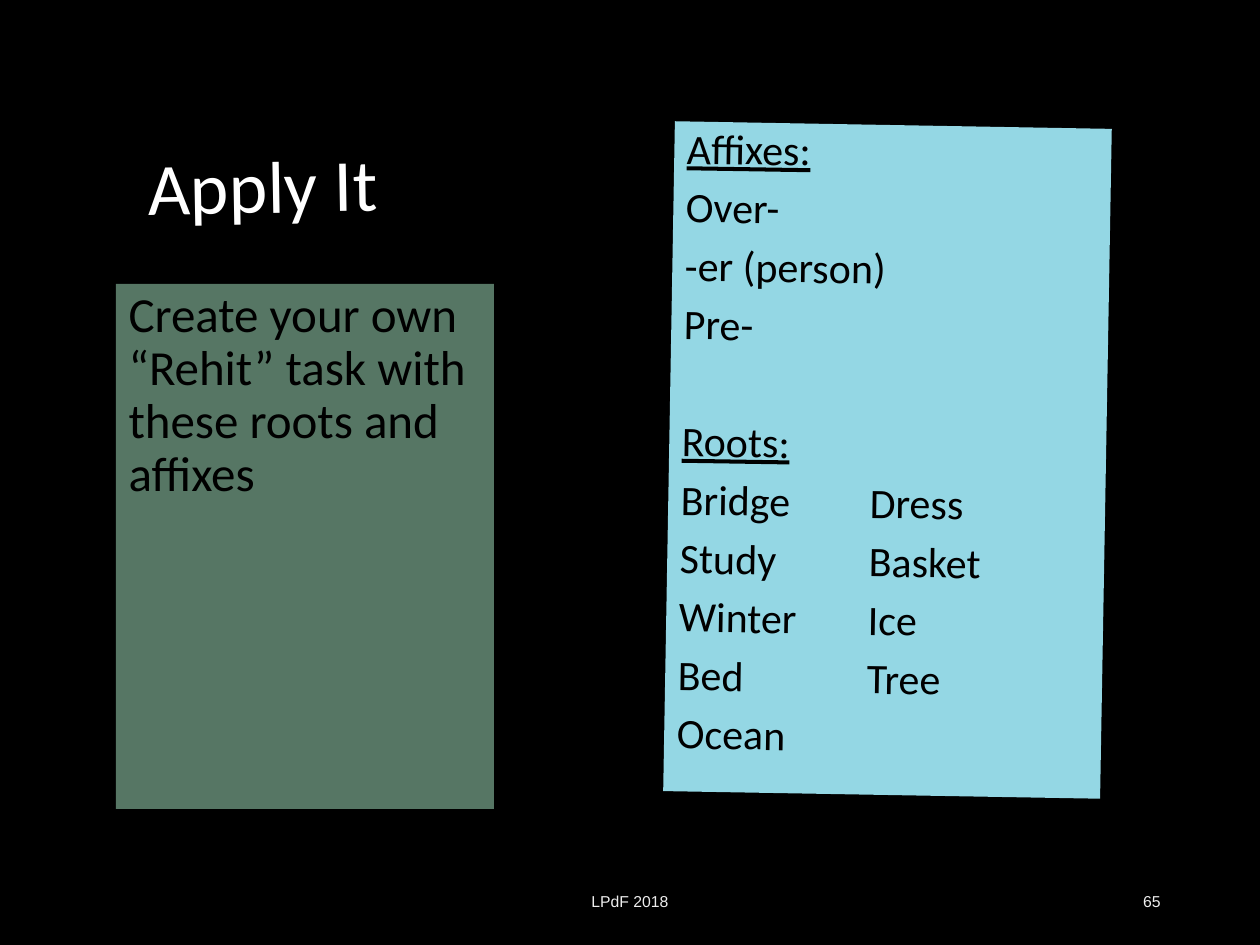
from lxml.etree import SubElement
from pptx import Presentation
from pptx.dml.color import RGBColor
from pptx.enum.text import MSO_ANCHOR, MSO_AUTO_SIZE, PP_ALIGN
from pptx.oxml.ns import qn
from pptx.util import Pt

PX = 914400 / 126
COLORS = {"black": "000000", "white": "FFFFFF", "blue": "94D7E4",
          "green": "567664", "footer": "EDEDED"}


def place(box, left, top, width, height, fill=None, rotation=0):
    box.left, box.top = round(left * PX), round(top * PX)
    box.width, box.height = round(width * PX), round(height * PX)
    box.rotation = rotation
    if fill:
        box.fill.solid()
        box.fill.fore_color.rgb = RGBColor.from_string(COLORS[fill])
    box.text_frame.word_wrap = True
    box.text_frame.auto_size = MSO_AUTO_SIZE.NONE


def style(paragraph, size, color, font="Calibri", align=PP_ALIGN.LEFT):
    paragraph.alignment = align
    for run in paragraph.runs:
        run.font.name = font
        run.font.size = Pt(size)
        run.font.color.rgb = RGBColor.from_string(COLORS[color])


prs = Presentation()
prs.slide_width, prs.slide_height = round(1260 * PX), round(945 * PX)
slide = prs.slides.add_slide(prs.slide_layouts[3])
slide.background.fill.solid()
slide.background.fill.fore_color.rgb = RGBColor.from_string(COLORS["black"])

# Title
title, task, word_parts = slide.placeholders
place(title, 135, 118, 422, 116, "black", 359)
title.line.color.rgb = RGBColor.from_string(COLORS["black"])
title.line.width = Pt(1)
title.text_frame.text = "Apply It"
title.text_frame.vertical_anchor = MSO_ANCHOR.BOTTOM
title.text_frame.paragraphs[0].line_spacing = 0.9
style(title.text_frame.paragraphs[0], 42, "white")

# Task and word parts
place(task, 116, 284, 378, 525, "green")
task.text_frame.text = "Create your own “Rehit” task with these roots and affixes"
place(word_parts, 669, 125, 437, 670, "blue", 1)
word_parts.text_frame.text = "\n".join([
    "Affixes:", "Over-", "-er (person)", "Pre-",
    "Roots:", "Bridge\t\tDress", "Study\t\tBasket", "Winter\t\tIce",
    "Bed\t\tTree", "Ocean"])

TAB = 94.5  # three quarters of an inch
for panel, size in ((task, 28), (word_parts, 24)):
    for index, paragraph in enumerate(panel.text_frame.paragraphs):
        properties = paragraph._p.get_or_add_pPr()
        properties.set("marL", "0")
        properties.set("indent", "0")
        SubElement(properties, qn("a:buNone"))
        if "\t" in paragraph.text:
            tabs = SubElement(properties, qn("a:tabLst"))
            for stop in (1, 2, 3):
                SubElement(tabs, qn("a:tab"), pos=str(round(stop * TAB * PX)), algn="l")
        heading = paragraph.text.endswith(":")
        paragraph.line_spacing = 0.9
        paragraph.space_before = Pt(0 if index == 0 else 41 if heading else 7.5)
        style(paragraph, size, "black")
        if heading:
            paragraph.runs[0].font.underline = True

# Footer and page number
for text, left, width, align in (("LPdF 2018", 417, 426, PP_ALIGN.CENTER),
                                 ("65", 890, 283, PP_ALIGN.RIGHT)):
    footer = slide.shapes.add_textbox(0, 0, 0, 0)
    place(footer, left, 876, width, 50)
    footer.text_frame.text = text
    footer.text_frame.vertical_anchor = MSO_ANCHOR.MIDDLE
    style(footer.text_frame.paragraphs[0], 9, "footer", "Arial", align)

prs.save("out.pptx")
